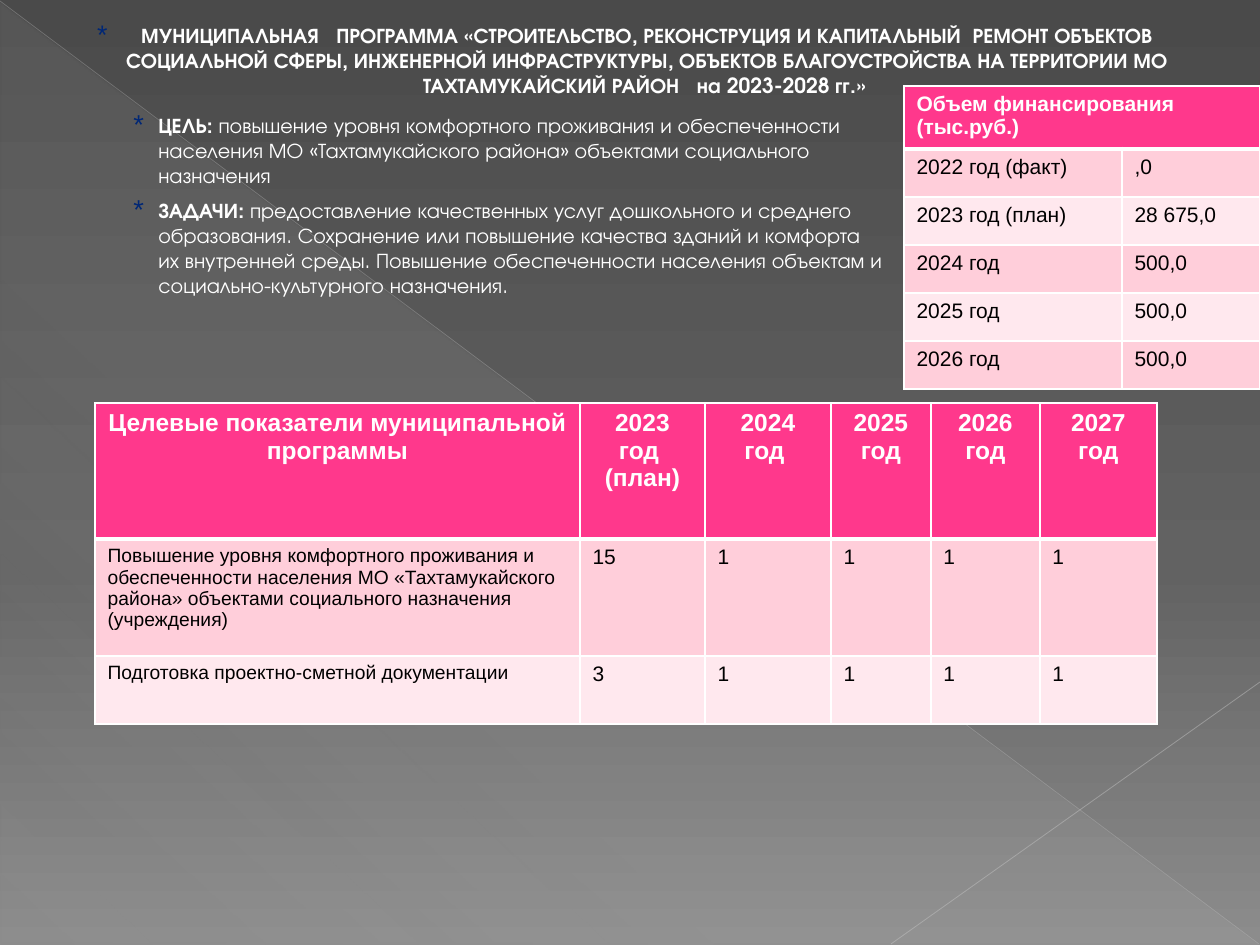
import pptx
import pptx.dml.color
import pptx.enum.shapes
import pptx.enum.text
import pptx.oxml
import pptx.oxml.ns
import pptx.util
import lxml.etree

PIXEL = 914400 / 126
WIDTH, HEIGHT = 1260, 945
HEADING_FONT, TABLE_FONT = "TeX Gyre Adventor", "Arial"
RGB = pptx.dml.color.RGBColor
WHITE, BLACK = RGB(0xFF, 0xFF, 0xFF), RGB(0, 0, 0)
BULLET = RGB(0x00, 0x27, 0x76)
PINK, PINK_MID, PINK_PALE = RGB(0xFF, 0x38, 0x8C), RGB(0xFF, 0xCE, 0xDA), RGB(0xFF, 0xE8, 0xEE)
GREY_DARK, GREY_MID, GREY_LIGHT = RGB(0x4A, 0x4A, 0x4A), RGB(0x62, 0x62, 0x62), RGB(0x8C, 0x8C, 0x8C)
SILVER = RGB(0xD2, 0xD2, 0xD2)
RAY_LONG, RAY_SHORT = RGB(0xBF, 0xBF, 0xBF), RGB(0xC6, 0xC6, 0xC6)
CENTER = pptx.enum.text.PP_ALIGN.CENTER


def px(*lengths):
    return [pptx.util.Emu(round(length * PIXEL)) for length in lengths]


def add_node(parent, tag, **attributes):
    node = lxml.etree.SubElement(parent, pptx.oxml.ns.qn(tag))
    for name, value in attributes.items():
        node.set(name, str(value))
    return node


def add_color(parent, color, opacity=100):
    node = add_node(parent, "a:srgbClr", val=color)
    if opacity < 100:
        add_node(node, "a:alpha", val=opacity * 1000)


def set_gradient(fill, element, stops, angle):
    """Stops are (position, colour, opacity); the angle runs clockwise."""
    fill.gradient()
    fill.gradient_angle = 360 - angle
    stop_list = element.find(".//" + pptx.oxml.ns.qn("a:gsLst"))
    for old_stop in list(stop_list):
        stop_list.remove(old_stop)
    for position, color, opacity in stops:
        add_color(add_node(stop_list, "a:gs", pos=position * 1000), color, opacity)


def write(paragraph, text, font=TABLE_FONT, size=12, color=BLACK, bold=False, align=None):
    run = paragraph.add_run()
    run.text = text
    run.font.name, run.font.size, run.font.bold = font, pptx.util.Pt(size), bold
    run.font.color.rgb = color
    if align is not None:
        paragraph.alignment = align


def set_bullet(paragraph, margin, hanging, percent):
    properties = paragraph._p.get_or_add_pPr()
    properties.set("marL", str(px(margin)[0]))
    properties.set("indent", str(-px(hanging)[0]))
    add_color(add_node(properties, "a:buClr"), BULLET)
    add_node(properties, "a:buSzPct", val=percent * 1000)
    add_node(properties, "a:buFont", typeface=TABLE_FONT)
    add_node(properties, "a:buChar", char="*")


def set_borders(cell, bottom):
    properties = cell._tc.get_or_add_tcPr()
    widths = {"a:lnL": 1, "a:lnR": 1, "a:lnT": 1, "a:lnB": bottom}
    for index, (tag, width) in enumerate(widths.items()):
        line = add_node(properties, tag, w=pptx.util.Pt(width))
        add_color(add_node(line, "a:solidFill"), WHITE)
        properties.insert(index, line)


class SlideBuilder:
    def __init__(self, presentation):
        self.slide = presentation.slides.add_slide(presentation.slide_layouts[6])

    def background(self, stops, angle):
        set_gradient(self.slide.background.fill, self.slide._element, stops, angle)

    def triangle(self, box, stops, angle):
        kind = pptx.enum.shapes.MSO_SHAPE.RIGHT_TRIANGLE
        shape = self.slide.shapes.add_shape(kind, *px(*box))
        shape.shadow.inherit = False
        shape.line.fill.background()
        set_gradient(shape.fill, shape._element.spPr, stops, angle)

    def line(self, ends, color, width, opacity):
        kind = pptx.enum.shapes.MSO_CONNECTOR.STRAIGHT
        connector = self.slide.shapes.add_connector(kind, *px(*ends))
        connector.line.width = pptx.util.Pt(width)
        connector.line.color.rgb = color
        properties = connector._element.spPr
        color_node = properties.find(".//" + pptx.oxml.ns.qn("a:srgbClr"))
        add_node(color_node, "a:alpha", val=opacity * 1000)
        add_node(properties, "a:effectLst")

    def bullets(self, box, items, margin, hanging, percent, before=0, after=0, align=None):
        """Each item is a pair: its bold part and its regular part."""
        frame = self.slide.shapes.add_textbox(*px(*box)).text_frame
        frame.word_wrap = True
        for index, item in enumerate(items):
            paragraph = frame.add_paragraph() if index else frame.paragraphs[0]
            paragraph.space_before = pptx.util.Pt(before)
            paragraph.space_after = pptx.util.Pt(after)
            set_bullet(paragraph, margin, hanging, percent)
            for text, bold in zip(item, (True, False)):
                if text:
                    write(paragraph, text, font=HEADING_FONT, color=WHITE, bold=bold, align=align)

    def table(self, left, top, columns, heights, rows, head, label_size=12):
        """Head formats the first row; label_size is for the first column below it."""
        box = px(left, top, sum(columns), sum(heights))
        table = self.slide.shapes.add_table(len(rows), len(columns), *box).table
        for column, width in zip(table.columns, px(*columns)):
            column.width = width
        for row, height in zip(table.rows, px(*heights)):
            row.height = height
        for row_index, texts in enumerate(rows):
            is_head = row_index == 0
            fill = PINK if is_head else (PINK_PALE, PINK_MID)[row_index % 2]
            for column_index, text in enumerate(texts):
                cell = table.cell(row_index, column_index)
                cell.fill.solid()
                cell.fill.fore_color.rgb = fill
                set_borders(cell, bottom=3 if is_head else 1)
                body = {"size": 12 if column_index else label_size}
                for index, part in enumerate(text.split("\n") if text else []):
                    frame = cell.text_frame
                    paragraph = frame.add_paragraph() if index else frame.paragraphs[0]
                    write(paragraph, part, **(head if is_head else body))
        return table


def main():
    presentation = pptx.Presentation()
    presentation.slide_width, presentation.slide_height = px(WIDTH, HEIGHT)
    builder = SlideBuilder(presentation)

    builder.background([(0, GREY_DARK, 100), (60, GREY_MID, 100), (100, GREY_LIGHT, 100)], 90)
    builder.triangle((1, 3, 1258, 942), [(0, SILVER, 10), (70, SILVER, 8), (100, SILVER, 1)], 133)
    builder.line((0, 1, 1259, 944), RAY_LONG, 0.39, 35)
    builder.line((1260, 682, 891, 944), RAY_SHORT, 0.47, 45)

    title = (
        "МУНИЦИПАЛЬНАЯ   ПРОГРАММА «СТРОИТЕЛЬСТВО, РЕКОНСТРУЦИЯ И КАПИТАЛЬНЫЙ  РЕМОНТ ОБЪЕКТОВ "
        "СОЦИАЛЬНОЙ СФЕРЫ, ИНЖЕНЕРНОЙ ИНФРАСТРУКТУРЫ, ОБЪЕКТОВ БЛАГОУСТРОЙСТВА НА ТЕРРИТОРИИ МО "
        "ТАХТАМУКАЙСКИЙ РАЙОН   на 2023-2028 гг.» ")
    builder.bullets((35, 16, 1181, 89), [(title, "")], 44, 44, 128, align=CENTER)

    funding = [
        ("Объем финансирования (тыс.руб.)", ""),
        ("2022 год (факт)", ",0"),
        ("2023 год (план)", "28 675,0"),
        *((f"{year} год", "500,0") for year in (2024, 2025, 2026)),
    ]
    head = {"color": WHITE, "bold": True}
    funding_table = builder.table(904, 86, (218, 138), (58, *[48] * 5), funding, head)
    funding_table.cell(0, 0).merge(funding_table.cell(0, 1))

    goals = [
        ("ЦЕЛЬ: ", "повышение уровня комфортного проживания и обеспеченности населения "
                   "МО «Тахтамукайского района» объектами социального назначения"),
        ("ЗАДАЧИ: ", "предоставление качественных услуг дошкольного и среднего образования. "
                     "Сохранение или повышение качества зданий и комфорта их внутренней среды. "
                     "Повышение обеспеченности населения объектам и социально-культурного назначения."),
    ]
    builder.bullets((115, 106, 784, 297), goals, 31, 25, 130, before=2.4, after=3)

    indicators = [
        ("Целевые показатели муниципальной программы", "2023 год  (план)", "2024 год ",
         "2025 год", "2026 год", "2027\nгод"),
        ("Повышение уровня комфортного проживания и обеспеченности населения МО «Тахтамукайского "
         "района» объектами социального назначения (учреждения)", "15", *"1111"),
        ("Подготовка проектно-сметной документации", "3", *"1111"),
    ]
    builder.table(95, 403, (485, 125, 126, 100, 109, 117), (136, 117, 68), indicators,
                  {**head, "size": 14, "align": CENTER}, label_size=11)

    presentation.save("out.pptx")


if __name__ == "__main__":
    main()
